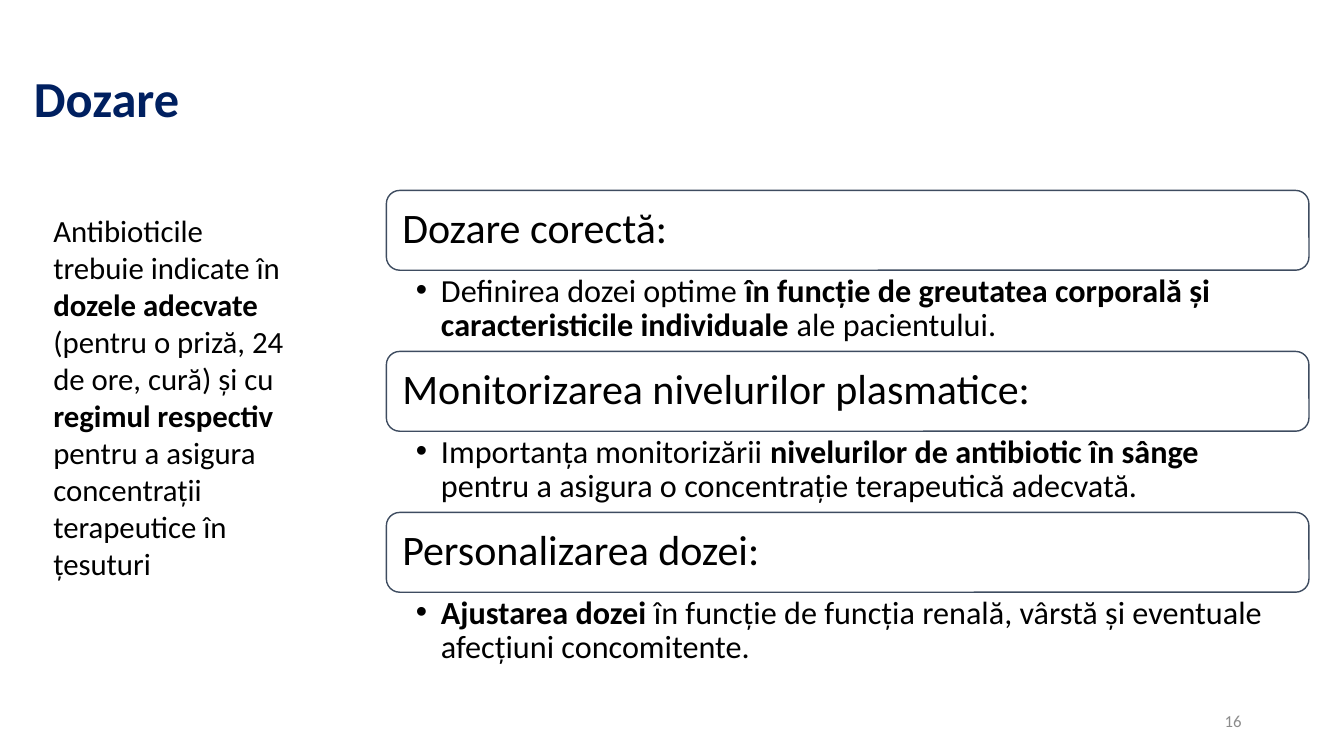
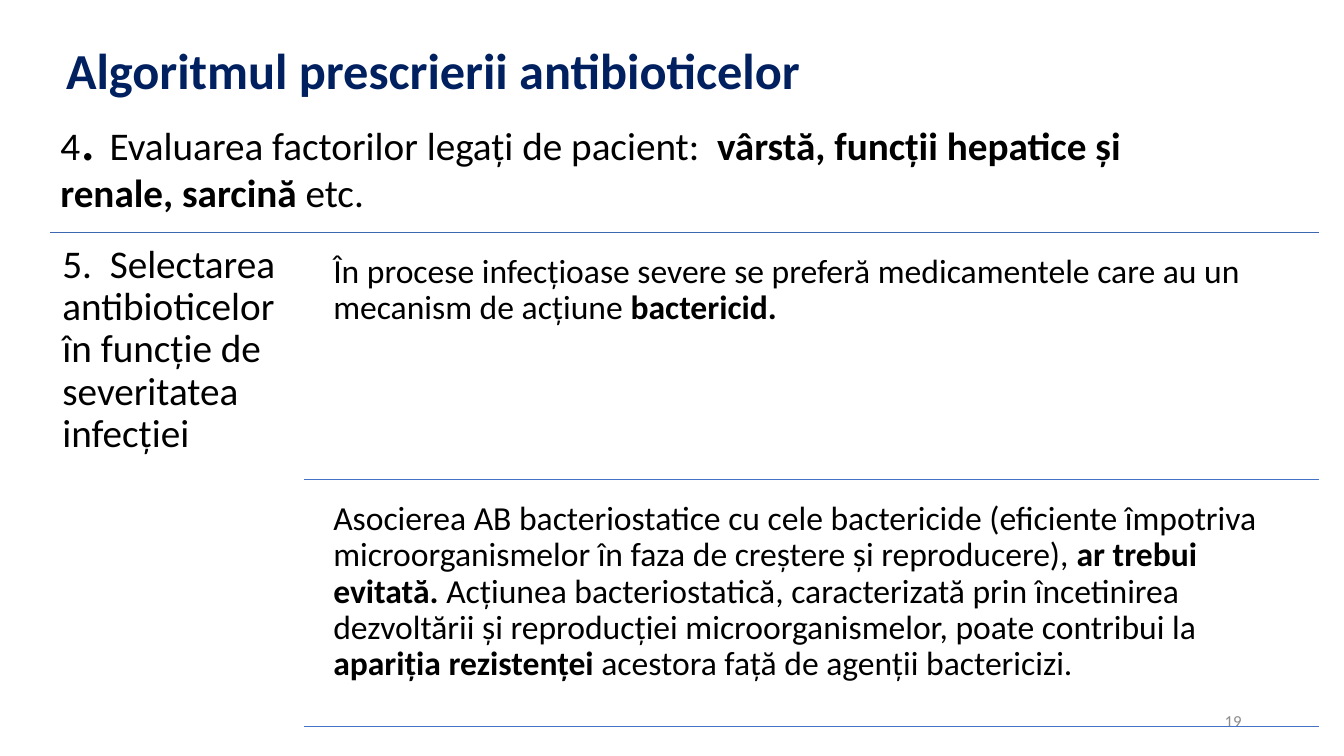
"""Build two slides on antibiotic dosing and prescribing."""
import pptx
import pptx.dml.color
import pptx.enum.shapes
import pptx.enum.text
import pptx.oxml.ns
import pptx.util
from lxml import etree

Pt = pptx.util.Pt
RGBColor = pptx.dml.color.RGBColor
Anchor = pptx.enum.text.MSO_ANCHOR
Align = pptx.enum.text.PP_ALIGN

NAVY = RGBColor(0x00, 0x20, 0x60)
BLACK = RGBColor(0x00, 0x00, 0x00)
WHITE = RGBColor(0xFF, 0xFF, 0xFF)
SLATE = RGBColor(0x3E, 0x4C, 0x60)
BLUE = RGBColor(0x44, 0x72, 0xC4)
DEEP_BLUE = RGBColor(0x3E, 0x67, 0xB2)
GRAY = RGBColor(0x8C, 0x8C, 0x8C)

DOSING_RULES = [
    ("Dozare corectă:",
     "Definirea dozei optime *în funcție de greutatea corporală și "
     "caracteristicile individuale *ale pacientului."),
    ("Monitorizarea nivelurilor plasmatice:",
     "Importanța monitorizării *nivelurilor de antibiotic în sânge *"
     "pentru a asigura o concentrație terapeutică adecvată."),
    ("Personalizarea dozei:",
     "*Ajustarea dozei *în funcție de funcția renală, vârstă și eventuale "
     "afecțiuni concomitente."),
]
SEVERITY_ADVICE = [
    "În procese infecțioase severe se preferă medicamentele care au un "
    "mecanism de acțiune *bactericid.",
    "Asocierea AB bacteriostatice cu cele bactericide (eficiente împotriva "
    "microorganismelor în faza de creștere și reproducere), *ar trebui "
    "evitată. *Acțiunea bacteriostatică, caracterizată prin încetinirea "
    "dezvoltării și reproducției microorganismelor, poate contribui la "
    "*apariția rezistenței *acestora față de agenții bactericizi.",
]


def write(paragraph, text, size=24, color=BLACK, bold=False):
    """Add text to a paragraph, with each asterisk switching bold."""
    for index, part in enumerate(text.split("*")):
        if part:
            run = paragraph.add_run()
            run.text = part
            run.font.name = "Calibri"
            run.font.size = Pt(size)
            run.font.color.rgb = color
            run.font.bold = bold != (index % 2 == 1)


class Deck:
    """Hold the shared style and the current slide."""

    def __init__(self):
        """Start an empty widescreen presentation."""
        self.show = pptx.Presentation()
        self.show.slide_width, self.show.slide_height = Pt(960), Pt(540)
        self.slide = None

    def add_slide(self, title, left, top, width, number):
        """Add a slide with its title and page number."""
        self.slide = self.show.slides.add_slide(self.show.slide_layouts[5])
        heading = self.slide.shapes.title
        heading.left, heading.top = Pt(left), Pt(top)
        heading.width, heading.height = Pt(width), Pt(104)
        paragraph = self.frame(heading, anchor=Anchor.MIDDLE)
        write(paragraph, title, size=36, color=NAVY, bold=True)
        page = self.text(678, 500, 216, 29, anchor=Anchor.MIDDLE, spacing=1)
        page.alignment = Align.RIGHT
        write(page, number, size=12, color=GRAY)

    def frame(self, shape, insets=(7.2, 3.6, 7.2, 3.6), anchor=Anchor.TOP,
              spacing=0.9):
        """Format a shape's text frame and return its first paragraph."""
        frame = shape.text_frame
        frame.auto_size = pptx.enum.text.MSO_AUTO_SIZE.NONE
        frame.word_wrap = True
        frame.vertical_anchor = anchor
        (frame.margin_left, frame.margin_top,
         frame.margin_right, frame.margin_bottom) = map(Pt, insets)
        paragraph = frame.paragraphs[0]
        paragraph.alignment = Align.LEFT
        paragraph.line_spacing = spacing
        return paragraph

    def text(self, left, top, width, height, **layout):
        """Add a text box and return its paragraph."""
        box = self.slide.shapes.add_textbox(
            Pt(left), Pt(top), Pt(width), Pt(height))
        return self.frame(box, **layout)

    def bullet(self, left, top, width, height, text):
        """Add a text box holding one bulleted paragraph."""
        paragraph = self.text(left, top, width, height,
                              insets=(21, 2.9, 16.5, 2.9))
        properties = paragraph._p.get_or_add_pPr()
        properties.set("marL", str(Pt(18)))
        properties.set("indent", str(-Pt(18)))
        for tag, key, value in (("a:buFont", "typeface", "Arial"),
                                ("a:buChar", "char", "•")):
            etree.SubElement(
                properties, pptx.oxml.ns.qn(tag)).set(key, value)
        write(paragraph, text, size=23)

    def card(self, left, top, width, height, text):
        """Add a rounded outlined heading."""
        card = self.slide.shapes.add_shape(
            pptx.enum.shapes.MSO_SHAPE.ROUNDED_RECTANGLE,
            Pt(left), Pt(top), Pt(width), Pt(height))
        card.shadow.inherit = False
        card.fill.solid()
        card.fill.fore_color.rgb = WHITE
        card.line.color.rgb = SLATE
        card.line.width = Pt(1)
        paragraph = self.frame(card, insets=(8.6,) * 4, anchor=Anchor.MIDDLE)
        write(paragraph, text, size=30)

    def rule(self, left, right, top, color=BLUE):
        """Add a horizontal dividing line."""
        rule = self.slide.shapes.add_connector(
            pptx.enum.shapes.MSO_CONNECTOR.STRAIGHT,
            Pt(left), Pt(top), Pt(right), Pt(top))
        rule.line.color.rgb = color
        rule.line.width = Pt(1)
        etree.SubElement(rule._element.spPr, pptx.oxml.ns.qn("a:effectLst"))


def dosing_slide(deck):
    """Build the slide on dosing."""
    deck.add_slide("Dozare", 17, 20, 873, "16")
    left, width, card_height, pitch = 276, 659, 57, 115
    for index, (heading, detail) in enumerate(DOSING_RULES):
        top = 136 + index * pitch
        deck.card(left, top, width, card_height, heading)
        deck.bullet(left, top + card_height, width, pitch - card_height, detail)
    summary = deck.text(31, 148, 187, 274, spacing=1)
    write(summary,
          "Antibioticile trebuie indicate în *dozele adecvate *(pentru o "
          "priză, 24 de ore, cură) și cu *regimul respectiv *pentru a "
          "asigura concentrații terapeutice în țesuturi", size=22)


def algorithm_slide(deck):
    """Build the slide on the prescribing algorithm."""
    deck.add_slide("Algoritmul prescrierii antibioticelor", 40, 0, 828, "19")
    left, column, right, top, pitch = 36, 217.5, 942.5, 166, 176.5
    patient = deck.text(left, 73, 832, 114)
    write(patient, "4", size=28)
    write(patient, ". ", size=44)
    write(patient, "Evaluarea factorilor legați de pacient:  *vârstă, "
          "funcții hepatice și renale, sarcină* etc.", size=28)
    deck.rule(left, right, top, DEEP_BLUE)
    severity = deck.text(left, top, column - left, 362, insets=(8.6,) * 4)
    write(severity, "5.  Selectarea antibioticelor în funcție de "
          "severitatea infecției", size=28)
    for index, advice in enumerate(SEVERITY_ADVICE):
        row = top + index * pitch
        write(deck.text(231, row + 8.5, right - 231, 168, insets=(7.2,) * 4),
              advice)
        deck.rule(column, right, row + pitch)


def main():
    """Build and save the presentation."""
    deck = Deck()
    dosing_slide(deck)
    algorithm_slide(deck)
    deck.show.save("out.pptx")


if __name__ == "__main__":
    main()
